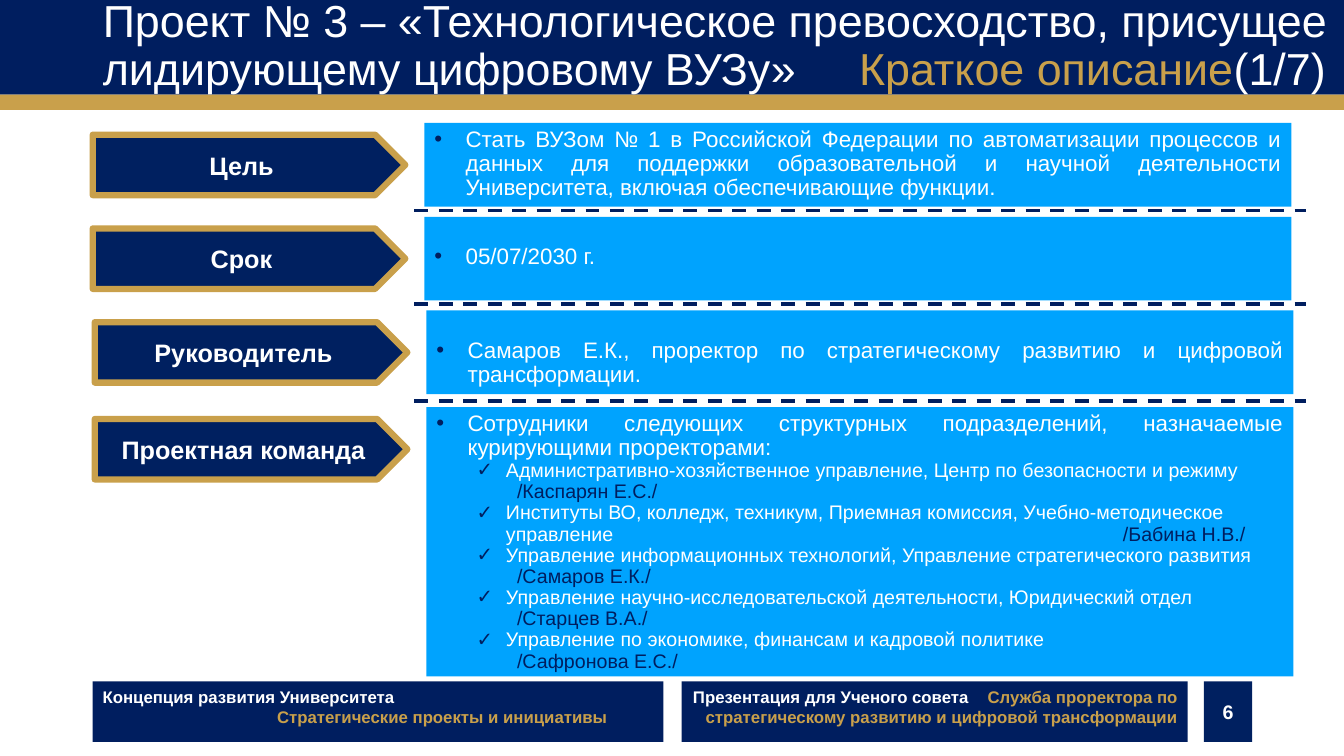
from dataclasses import dataclass

from lxml import etree
from pptx import Presentation
from pptx import util as u
from pptx.dml.color import RGBColor
from pptx.enum import dml, shapes, text
from pptx.oxml.ns import qn


@dataclass(frozen=True)
class Theme:
    font: str = "Arial"
    navy: str = "001E5F"
    label_navy: str = "002060"
    gold: str = "C9A04B"
    sky: str = "00A3FE"
    white: str = "FFFFFF"
    title: int = 32
    label: int = 18
    body: int = 16
    unit: int = 14
    footer: int = 12


THEME = Theme()
WIDTH, HEIGHT = u.Inches(13.33), u.Inches(7.5)

# Positions and sizes are percentages of the slide's width and height.
LABEL_LEFT, LABEL_WIDTH, LABEL_HEIGHT = 6.9, 23.26, 8
LABEL_DROP = 1.55
PANEL_OFFSET, PANEL_WIDTH, PANEL_HEIGHT = 24.68, 64.5, 11.07
RULE_LEFT, RULE_RIGHT, RULE_RISE = 30.83, 97.15, 0.85
FOOTER_TOP, FOOTER_HEIGHT = 90.13, 8

UNITS = [
    ("Административно-хозяйственное управление, Центр по безопасности и режиму", "/Каспарян Е.С./", True),
    ("Институты ВО, колледж, техникум, Приемная комиссия, Учебно-методическое управление", "/Бабина Н.В./", False),
    ("Управление информационных технологий, Управление стратегического развития", "/Самаров Е.К./", True),
    ("Управление научно-исследовательской деятельности, Юридический отдел", "/Старцев В.А./", True),
    ("Управление по экономике, финансам и кадровой политике", "/Сафронова Е.С./", True),
]

# label, text, left shift, top, panel height, text margin above in inches
ROWS = [
    ("Цель", "Стать ВУЗом № 1 в Российской Федерации по автоматизации процессов и данных для поддержки "
     "образовательной и научной деятельности Университета, включая обеспечивающие функции.",
     0, 16.27, PANEL_HEIGHT, 0.05),
    ("Срок", "05/07/2030 г.", 0, 28.67, PANEL_HEIGHT, 0.28),
    ("Руководитель", "Самаров Е.К., проректор по стратегическому развитию и цифровой трансформации.",
     0.15, 41.07, PANEL_HEIGHT, 0.28),
    ("Проектная команда", "Сотрудники следующих структурных подразделений, назначаемые курирующими проректорами:",
     0.15, 53.87, 35.6, 0.05),
]


def across(percent):
    return round(WIDTH * percent / 100)


def down(percent):
    return round(HEIGHT * percent / 100)


def rgb(colour):
    return RGBColor.from_string(colour)


def add_block(slide, box, fill, preset=shapes.MSO_SHAPE.RECTANGLE, anchor=text.MSO_ANCHOR.TOP):
    left, top, width, height = box
    block = slide.shapes.add_shape(preset, across(left), down(top), across(width), down(height))
    block.shadow.inherit = False
    block.fill.solid()
    block.fill.fore_color.rgb = rgb(fill)
    block.line.fill.background()
    block.text_frame.word_wrap = True
    block.text_frame.vertical_anchor = anchor
    return block


def write(paragraph, wording, size, colour=THEME.white, bold=False):
    run = paragraph.add_run()
    run.text = wording
    run.font.name, run.font.size, run.font.bold = THEME.font, u.Pt(size), bold
    run.font.color.rgb = rgb(colour)
    return run


def indent(paragraph, margin, first=0):
    properties = paragraph._p.get_or_add_pPr()
    properties.set("marL", str(u.Inches(margin)))
    properties.set("indent", str(u.Inches(first)))
    return properties


def add_bullet(paragraph, mark, margin, first):
    paragraph.line_spacing = 0.9
    properties = indent(paragraph, margin, first)
    colour = etree.SubElement(properties, qn("a:buClr"))
    etree.SubElement(colour, qn("a:srgbClr"), val=THEME.navy)
    etree.SubElement(properties, qn("a:buFont"), typeface=THEME.font)
    etree.SubElement(properties, qn("a:buChar"), char=mark)


def add_tab_stop(paragraph, position):
    stops = etree.SubElement(paragraph._p.get_or_add_pPr(), qn("a:tabLst"))
    etree.SubElement(stops, qn("a:tab"), pos=str(u.Inches(position)), algn="l")


def add_header(slide):
    add_block(slide, (0, 0, 100, 12.53), THEME.navy)
    add_block(slide, (0, 12.53, 100, 2), THEME.gold)
    title = slide.shapes.title
    slide.shapes._spTree.append(title._element)
    title.left, title.top, title.width, title.height = across(6.9), 0, across(93.1), down(12.4)
    frame = title.text_frame
    frame.word_wrap, frame.vertical_anchor = True, text.MSO_ANCHOR.MIDDLE
    frame.auto_size = text.MSO_AUTO_SIZE.NONE
    heading = frame.paragraphs[0]
    heading.alignment, heading.line_spacing = text.PP_ALIGN.LEFT, 0.9
    add_tab_stop(heading, 7.5)
    write(heading, "Проект № 3 – «Технологическое превосходство, присущее лидирующему цифровому ВУЗу»\t", THEME.title)
    write(heading, "Краткое описание", THEME.title, THEME.gold)
    write(heading, "(1/7)", THEME.title)


def add_row(slide, label, wording, shift, top, height, margin_above):
    """Place an arrow label with its text panel; return the panel."""
    left = LABEL_LEFT + shift
    arrow = add_block(slide, (left, top + LABEL_DROP, LABEL_WIDTH, LABEL_HEIGHT), THEME.label_navy,
                      shapes.MSO_SHAPE.PENTAGON, text.MSO_ANCHOR.MIDDLE)
    arrow.line.color.rgb, arrow.line.width = rgb(THEME.gold), u.Pt(4.5)
    caption = arrow.text_frame.paragraphs[0]
    caption.alignment = text.PP_ALIGN.CENTER
    write(caption, label, THEME.label, bold=True)

    panel = add_block(slide, (left + PANEL_OFFSET, top, PANEL_WIDTH, height), THEME.sky)
    panel.text_frame.margin_top = u.Inches(margin_above)
    statement = panel.text_frame.paragraphs[0]
    statement.alignment = text.PP_ALIGN.JUSTIFY
    add_bullet(statement, "•", 0.31, -0.31)
    write(statement, wording, THEME.body)
    return panel


def add_units(panel):
    for unit, head, on_new_line in UNITS:
        item = panel.text_frame.add_paragraph()
        item.level, item.alignment = 1, text.PP_ALIGN.LEFT
        add_bullet(item, "✓", 0.69, -0.29)
        add_tab_stop(item, 0.8 if on_new_line else 6.81)
        write(item, unit, THEME.unit)
        if on_new_line:
            item.add_line_break()
            etree.SubElement(item._p[-1], qn("a:rPr"), sz=str(THEME.unit * 100))
        write(item, "\t" + head, THEME.unit, THEME.navy)


def add_rule(slide, top):
    rule = slide.shapes.add_connector(shapes.MSO_CONNECTOR.STRAIGHT, across(RULE_LEFT), down(top),
                                      across(RULE_RIGHT), down(top))
    rule.line.color.rgb, rule.line.width = rgb(THEME.navy), u.Pt(2.5)
    rule.line.dash_style = dml.MSO_LINE.DASH
    etree.SubElement(rule._element.spPr, qn("a:effectLst"))


def add_footer(slide):
    concept = add_block(slide, (6.9, FOOTER_TOP, 42.46, FOOTER_HEIGHT), THEME.navy).text_frame
    heading, subject = concept.paragraphs[0], concept.add_paragraph()
    heading.alignment = subject.alignment = text.PP_ALIGN.LEFT
    write(heading, "Концепция развития Университета", THEME.footer, bold=True)
    indent(subject, 1.73)
    write(subject, "Стратегические проекты и инициативы", THEME.footer, THEME.gold, True)

    audience = add_block(slide, (50.71, FOOTER_TOP, 37.66, FOOTER_HEIGHT), THEME.navy).text_frame.paragraphs[0]
    audience.alignment = text.PP_ALIGN.RIGHT
    write(audience, "Презентация для Ученого совета", THEME.footer, bold=True)
    gap = write(audience, " ", THEME.footer, bold=True)
    gap.font._element.set("spc", "1000")
    write(audience, "Служба проректора по стратегическому развитию и цифровой трансформации",
          THEME.footer, THEME.gold, True)

    number = add_block(slide, (89.57, FOOTER_TOP, 3.6, FOOTER_HEIGHT), THEME.label_navy,
                       anchor=text.MSO_ANCHOR.MIDDLE).text_frame.paragraphs[0]
    number.alignment = text.PP_ALIGN.CENTER
    write(number, "6", THEME.unit, bold=True)


def main():
    deck = Presentation()
    deck.slide_width, deck.slide_height = WIDTH, HEIGHT
    slide = deck.slides.add_slide(deck.slide_layouts[5])
    add_header(slide)
    panels = [add_row(slide, *row) for row in ROWS]
    add_units(panels[-1])
    for row in ROWS[1:]:
        add_rule(slide, row[3] - RULE_RISE)
    add_footer(slide)
    deck.save("out.pptx")


if __name__ == "__main__":
    main()
